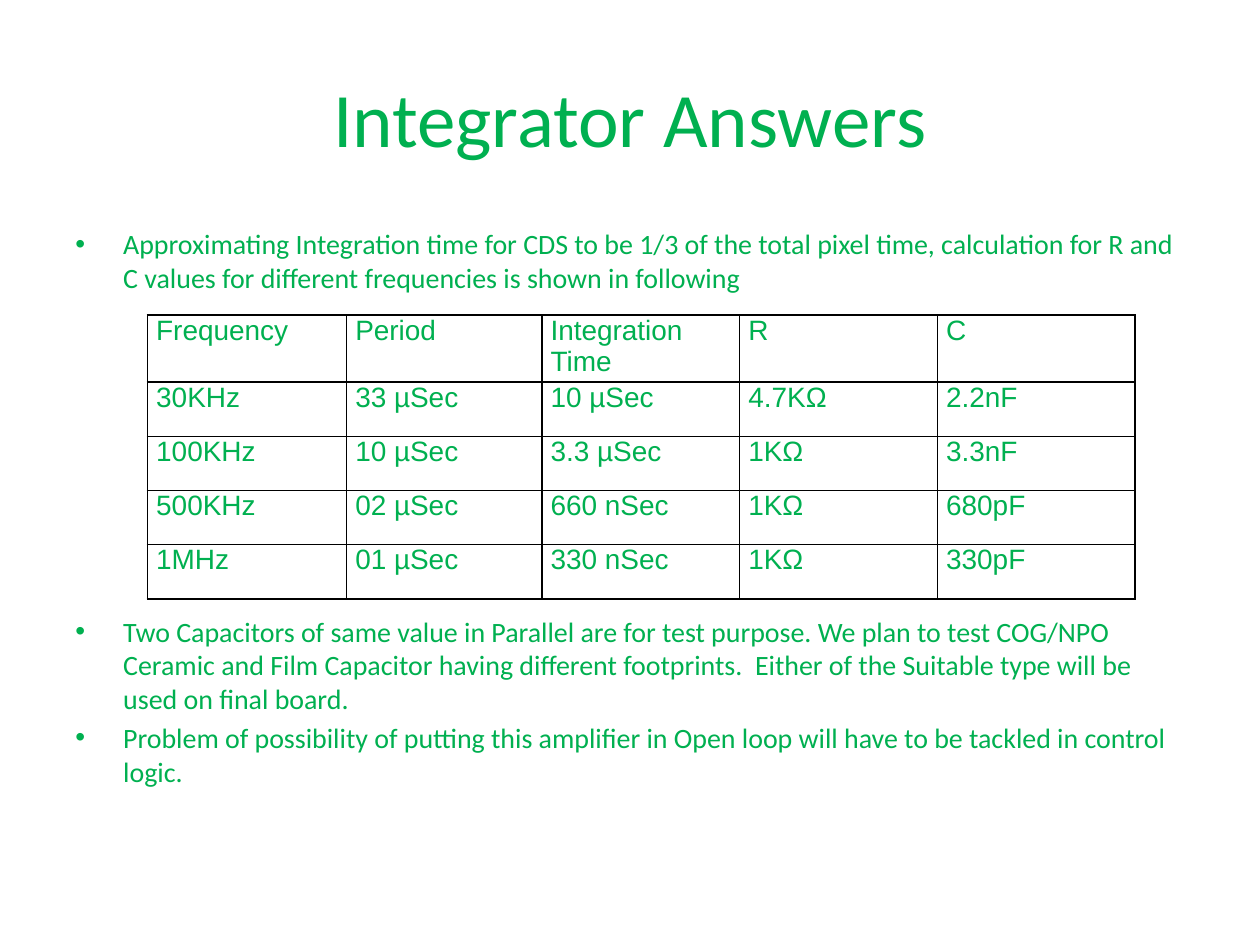
import pptx
import pptx.dml.color
import pptx.enum.text
import pptx.oxml
import pptx.oxml.ns
import pptx.util
from pptx.util import Inches

# Content
TITLE = "Integrator Answers"
BULLETS = [  # text, space before in points; the second leaves room for the table
    ("Approximating Integration time for CDS to be 1/3 of the total pixel time, "
     "calculation for R and C values for different frequencies is shown in following", 0),
    ("Two Capacitors of same value in Parallel are for test purpose. We plan to test "
     "COG/NPO Ceramic and Film Capacitor having different footprints.  Either of the "
     "Suitable type will be used on final board.", 183),
    ("Problem of possibility of putting this amplifier in Open loop will have to be "
     "tackled in control logic.", 3.2),
]
ROWS = [
    ("Frequency", "Period", "Integration Time", "R", "C"),
    ("30KHz", "33 µSec", "10 µSec", "4.7KΩ", "2.2nF"),
    ("100KHz", "10 µSec", "3.3 µSec", "1KΩ", "3.3nF"),
    ("500KHz", "02 µSec", "660 nSec", "1KΩ", "680pF"),
    ("1MHz", "01 µSec", "330 nSec", "1KΩ", "330pF"),
]

# Format
COLORS = {"text": "00B050", "border": "000000", "page": "FFFFFF"}
FONTS = {
    "title": {"name": "Calibri", "size": pptx.util.Pt(44)},
    "body": {"name": "Calibri", "size": pptx.util.Pt(16)},
    "table": {"name": "Arial", "size": pptx.util.Pt(16)},
}
COLUMN_WIDTHS = [1.58, 1.55, 1.57, 1.57, 1.57]
ROW_HEIGHT = 0.43
CELL_MARGINS = {"margin_left": Inches(0.07), "margin_right": Inches(0.07),
                "margin_top": 0, "margin_bottom": 0}
INDENT = Inches(0.38)
NAMESPACE = pptx.oxml.ns.nsdecls("a")


def set_values(target, values):
    for name, value in values.items():
        setattr(target, name, value)


def write(para, text, role):
    span = para.add_run()
    span.text = text
    set_values(span.font, FONTS[role])
    span.font.color.rgb = pptx.dml.color.RGBColor.from_string(COLORS["text"])


def add_box(page, left, top, width, height):
    box = page.shapes.add_textbox(*map(Inches, (left, top, width, height)))
    box.text_frame.word_wrap = True
    return box.text_frame


def add_bullet(para):
    properties = para._p.get_or_add_pPr()
    properties.set("marL", str(INDENT))
    properties.set("indent", str(-INDENT))
    for markup in ('a:buFont {} typeface="Arial"', 'a:buChar {} char="•"'):
        properties.append(pptx.oxml.parse_xml(f"<{markup.format(NAMESPACE)}/>"))


def add_borders(cell):
    properties = cell._tc.get_or_add_tcPr()
    for position, side in enumerate("LRTB"):
        properties.insert(position, pptx.oxml.parse_xml(
            f'<a:ln{side} {NAMESPACE} w="{pptx.util.Pt(1)}"><a:solidFill>'
            f'<a:srgbClr val="{COLORS["border"]}"/></a:solidFill></a:ln{side}>'))


def main():
    deck = pptx.Presentation()
    deck.slide_width, deck.slide_height = Inches(10), Inches(7.5)
    page = deck.slides.add_slide(deck.slide_layouts[6])
    page.background.fill.solid()
    page.background.fill.fore_color.rgb = pptx.dml.color.RGBColor.from_string(COLORS["page"])

    # Title
    frame = add_box(page, 0.5, 0.3, 9, 1.25)
    frame.vertical_anchor = pptx.enum.text.MSO_ANCHOR.MIDDLE
    frame.paragraphs[0].alignment = pptx.enum.text.PP_ALIGN.CENTER
    write(frame.paragraphs[0], TITLE, "title")

    # Bullets above and below the table
    frame = add_box(page, 0.5, 1.75, 9, 4.95)
    for number, (text, space) in enumerate(BULLETS):
        para = frame.add_paragraph() if number else frame.paragraphs[0]
        para.space_before = pptx.util.Pt(space)
        add_bullet(para)
        write(para, text, "body")

    # Table of component values
    table = page.shapes.add_table(
        len(ROWS), len(COLUMN_WIDTHS), Inches(1.17), Inches(2.5),
        Inches(sum(COLUMN_WIDTHS)), Inches(ROW_HEIGHT * len(ROWS))).table
    set_values(table, {"first_row": False, "horz_banding": False})
    for column, width in zip(table.columns, COLUMN_WIDTHS):
        column.width = Inches(width)
    for row, texts in zip(table.rows, ROWS):
        row.height = Inches(ROW_HEIGHT)
        for cell, text in zip(row.cells, texts):
            set_values(cell, CELL_MARGINS)
            cell.fill.background()
            add_borders(cell)
            write(cell.text_frame.paragraphs[0], text, "table")

    deck.save("out.pptx")


if __name__ == "__main__":
    main()
